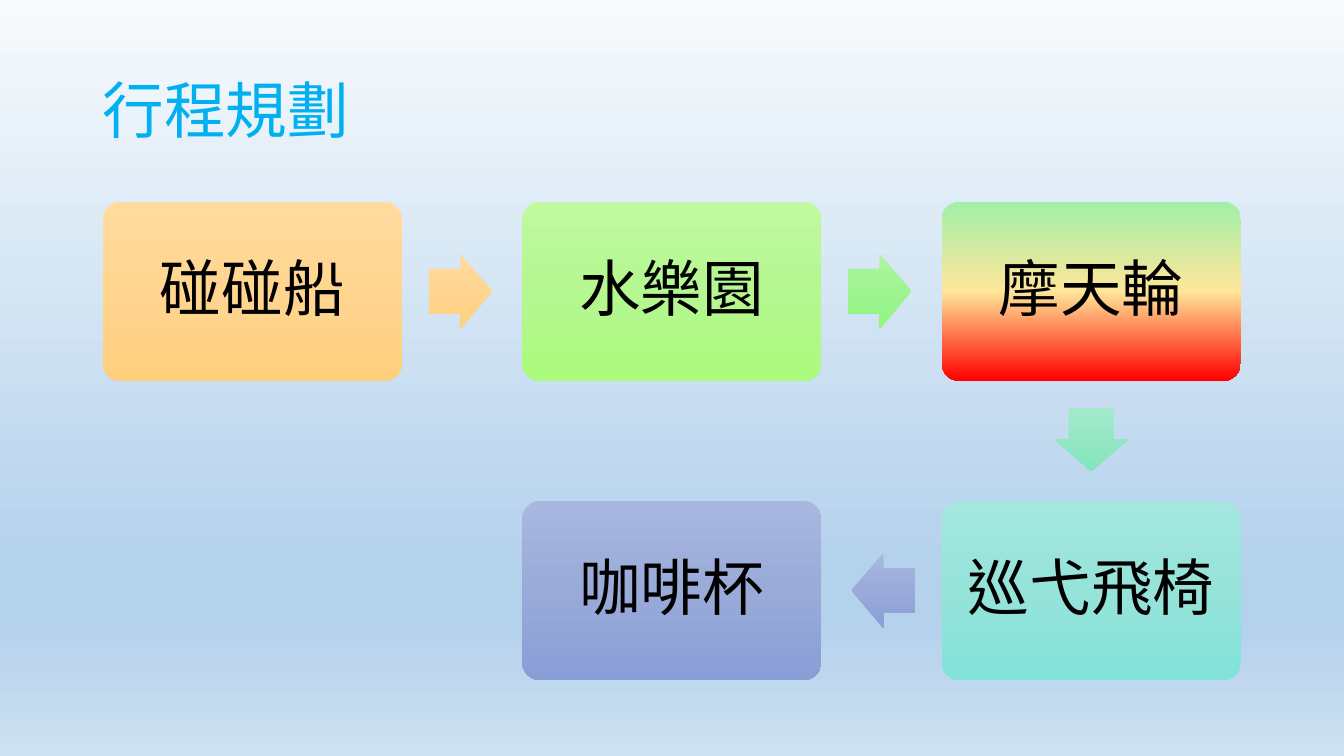
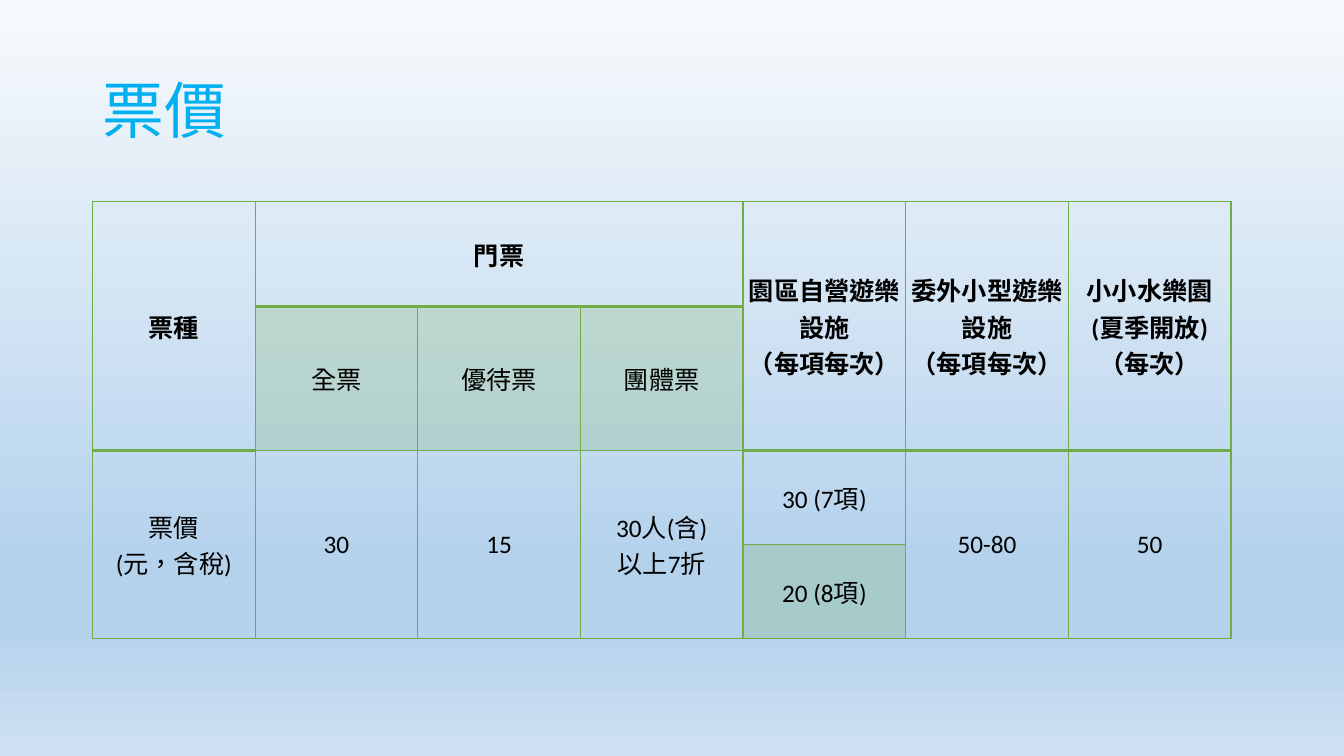
from lxml.etree import SubElement as Sub
from pptx import Presentation
from pptx.dml.color import RGBColor as RGB
from pptx.enum.shapes import MSO_SHAPE as Kind
from pptx.enum.text import MSO_ANCHOR as Anchor, PP_ALIGN as Align
from pptx.oxml.ns import qn
from pptx.util import Cm, Pt

# Colours and fonts
BLUE = RGB(0x00, 0xB0, 0xF0)
BLACK = RGB(0x00, 0x00, 0x00)
GREEN = RGB(0x70, 0xAD, 0x47)
SKY = [(0, RGB(0xF7, 0xFA, 0xFD)), (74, RGB(0xB5, 0xD2, 0xEC)),
       (83, RGB(0xB5, 0xD2, 0xEC)), (100, RGB(0xCE, 0xE1, 0xF2))]
AMBER = [(0, RGB(0xFF, 0xDB, 0x9E)), (50, RGB(0xFF, 0xD5, 0x90)),
         (100, RGB(0xFF, 0xD0, 0x7C))]
LIME = [(0, RGB(0xC0, 0xF9, 0x9F)), (50, RGB(0xB5, 0xF7, 0x91)),
        (100, RGB(0xAB, 0xFB, 0x7D))]
LEAF = [(0, RGB(0xAC, 0xF6, 0xA0)), (50, RGB(0x9F, 0xF3, 0x92)),
        (100, RGB(0x8E, 0xF7, 0x7D))]
FIRE = [(0, RGB(0xA1, 0xF0, 0xA9)), (50, RGB(0xFF, 0xE6, 0x99)),
        (100, RGB(0xFF, 0x00, 0x00))]
MINT = [(0, RGB(0xA3, 0xEA, 0xCC)), (50, RGB(0x95, 0xE6, 0xC4)),
        (100, RGB(0x81, 0xE7, 0xBD))]
TEAL = [(0, RGB(0xA4, 0xE7, 0xE0)), (50, RGB(0x96, 0xE3, 0xDA)),
        (100, RGB(0x82, 0xE3, 0xD9))]
LILAC = [(0, RGB(0xA8, 0xB7, 0xDF)), (50, RGB(0x9A, 0xAB, 0xD9)),
         (100, RGB(0x88, 0x9E, 0xD7))]
LATIN = "Calibri"
ASIAN = "Noto Sans CJK JP"


def shade(fill, root, stops):
    """Fill from top to bottom with the given colour stops."""
    fill.gradient()
    fill.gradient_angle = 270
    items = root.find(".//" + qn("a:gsLst"))
    items.clear()
    for place, color in stops:
        stop = Sub(items, qn("a:gs"), pos=str(place * 1000))
        Sub(stop, qn("a:srgbClr"), val=str(color))


def write(para, text, size, color=BLACK, bold=False, face=LATIN):
    """Add one run of Chinese or Latin text."""
    run = para.add_run()
    run.text = text
    font = run.font
    font.size, font.bold, font.name = Pt(size), bold, face
    font.color.rgb = color
    props = run._r.get_or_add_rPr()
    props.set("lang", "zh-TW")
    Sub(props, qn("a:ea"), typeface=ASIAN)


# Shared background
deck = Presentation()
deck.slide_width, deck.slide_height = Cm(33.87), Cm(19.05)
base = deck.slide_master
shade(base.background.fill, base.element, SKY)

# Slides with their titles
pages = []
for name in ("行程規劃", "票價"):
    page = deck.slides.add_slide(deck.slide_layouts[5])
    title = page.shapes.title
    title.left, title.top = Cm(2.33), Cm(1.01)
    title.width, title.height = Cm(29.21), Cm(3.68)
    title.text_frame.vertical_anchor = Anchor.MIDDLE
    para = title.text_frame.paragraphs[0]
    para.alignment, para.line_spacing = Align.LEFT, 0.9
    write(para, name, 44, BLUE, face=ASIAN)
    pages.append(page)
plan, price = pages

# Route: cards on a grid, as column, row, label, colours
LEFT, TOP, STEP, DROP = 2.59, 5.08, 10.57, 7.54
WIDE, HIGH = 7.54, 4.52
cards = [(0, 0, "碰碰船", AMBER), (1, 0, "水樂園", LIME), (2, 0, "摩天輪", FIRE),
         (2, 1, "巡弋飛椅", TEAL), (1, 1, "咖啡杯", LILAC)]
for col, row, label, stops in cards:
    card = plan.shapes.add_shape(
        Kind.ROUNDED_RECTANGLE, Cm(LEFT + col * STEP), Cm(TOP + row * DROP),
        Cm(WIDE), Cm(HIGH))
    card.adjustments[0] = 0.1
    card.shadow.inherit = False
    card.line.fill.background()
    shade(card.fill, card.element, stops)
    frame = card.text_frame
    frame.word_wrap = True
    frame.vertical_anchor = Anchor.MIDDLE
    frame.margin_left = frame.margin_right = Cm(0.5)
    para = frame.paragraphs[0]
    para.alignment, para.line_spacing = Align.CENTER, 0.9
    write(para, label, 44)

# Route: arrows between the cards
LONG, BROAD = 1.6, 1.88
arrows = [(Kind.RIGHT_ARROW, 10.8, 6.4, LONG, BROAD, AMBER),
          (Kind.RIGHT_ARROW, 10.8 + STEP, 6.4, LONG, BROAD, LEAF),
          (Kind.DOWN_ARROW, 26.56, 10.27, BROAD, LONG, MINT),
          (Kind.LEFT_ARROW, 21.46, 6.4 + DROP, LONG, BROAD, LILAC)]
for kind, left, top, wide, high, stops in arrows:
    arrow = plan.shapes.add_shape(kind, Cm(left), Cm(top), Cm(wide), Cm(high))
    arrow.adjustments[0], arrow.adjustments[1] = 0.6, 0.5
    arrow.shadow.inherit = False
    arrow.line.fill.background()
    shade(arrow.fill, arrow.element, stops)

# Prices: table size and merged cells
WIDTH = 4.1
highs = [2.64, 3.63, 2.37, 2.37]
grid = price.shapes.add_table(4, 7, Cm(2.33), Cm(5.08), Cm(7 * WIDTH),
                              Cm(sum(highs))).table
grid.first_row = grid.horz_banding = False
for col in grid.columns:
    col.width = Cm(WIDTH)
for row, high in zip(grid.rows, highs):
    row.height = Cm(high)
grid.cell(0, 1).merge(grid.cell(0, 3))
for top, cols in ((0, (0, 4, 5, 6)), (2, (0, 1, 2, 3, 5, 6))):
    for col in cols:
        grid.cell(top, col).merge(grid.cell(top + 1, col))

# Prices: wording, fills and borders
texts = [
    ["票種", "門票", "", "", "園區自營遊樂設施\n（每項每次）",
     "委外小型遊樂設施\n（每項每次）", "小小水樂園\n(夏季開放)\n（每次）"],
    ["", "全票", "優待票", "團體票", "", "", ""],
    ["票價\n(元，含稅)", "30", "15", "30人(含)\n以上7折", "30 (7項)", "50-80", "50"],
    ["", "", "", "", "20 (8項)", "", ""],
]
tinted = {(1, 1), (1, 2), (1, 3), (3, 4)}
heavy = {(0, col) for col in range(7)} | {(1, col) for col in (0, 4, 5, 6)}
for row, line in enumerate(texts):
    for col, text in enumerate(line):
        cell = grid.cell(row, col)
        cell.vertical_anchor = Anchor.MIDDLE
        cell.margin_left = cell.margin_right = Cm(0.08)
        cell.margin_top = cell.margin_bottom = Cm(0.08)
        props = cell._tc.get_or_add_tcPr()
        if (row, col) in tinted:
            cell.fill.solid()
            cell.fill.fore_color.rgb = GREEN
            Sub(props.find(".//" + qn("a:srgbClr")), qn("a:alpha"), val="20000")
        else:
            cell.fill.background()
        above = 2 if (row - 1, col) in heavy else 1
        below = 2 if (row, col) in heavy else 1
        sides = (("L", 1), ("R", 1), ("T", above), ("B", below))
        for spot, (side, size) in enumerate(sides):
            edge = Sub(props, qn("a:ln" + side), w=str(Pt(size)))
            Sub(Sub(edge, qn("a:solidFill")), qn("a:srgbClr"), val=str(GREEN))
            props.insert(spot, edge)
        if not text:
            continue
        frame = cell.text_frame
        for spot, part in enumerate(text.split("\n")):
            para = frame.add_paragraph() if spot else frame.paragraphs[0]
            para.alignment = Align.CENTER
            write(para, part, 18, bold=row == 0)

deck.save("out.pptx")
